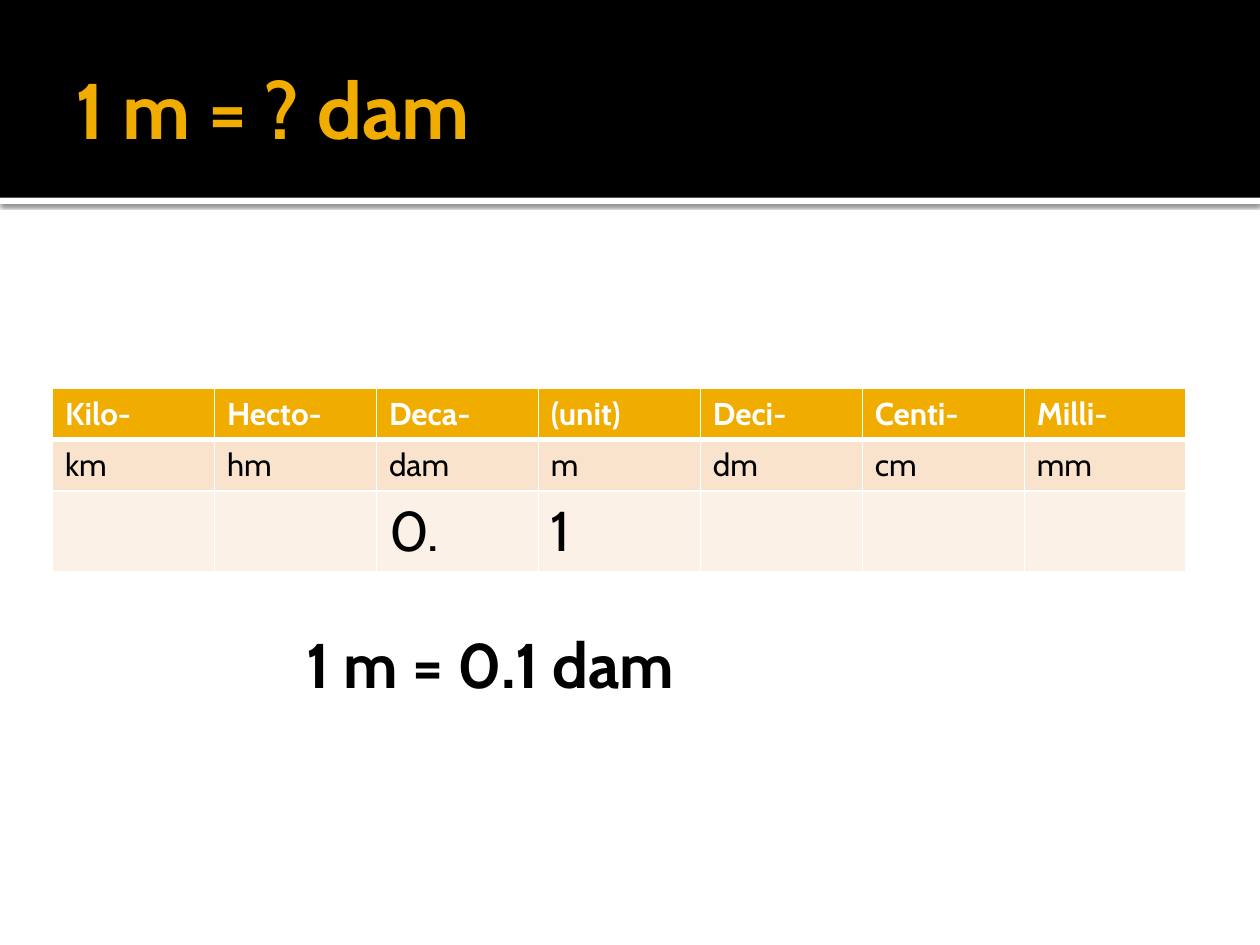
from lxml import etree
from pptx import Presentation
from pptx.dml.color import RGBColor
from pptx.enum.shapes import MSO_SHAPE
from pptx.enum.text import MSO_ANCHOR
from pptx.oxml.ns import qn
from pptx.util import Pt

RECTANGLE = MSO_SHAPE.RECTANGLE
MIDDLE, TOP = MSO_ANCHOR.MIDDLE, MSO_ANCHOR.TOP

# Content
TITLE = "1 m = ? dam"
ANSWER = "1 m = 0.1 dam"
UNITS = [
    ["Kilo-", "Hecto-", "Deca-", "(unit)", "Deci-", "Centi-", "Milli-"],
    ["km", "hm", "dam", "m", "dm", "cm", "mm"],
    ["", "", "0.", "1", "", "", ""],
]

# Style
FONT = "Cabin"
COLORS = {"white": "FFFFFF", "black": "000000", "gold": "F0AD00",
          "peach": "F9E3CC", "cream": "FCF1E7"}
# Per row: height, fill, text color, text size, bold, bottom border width
ROW_STYLES = [
    (29.3, "gold", "white", 18, True, 3),
    (29.3, "peach", "black", 18, False, 1),
    (46, "cream", "black", 32, False, 1),
]
SLIDE_WIDTH, SLIDE_HEIGHT = 720, 540
BANNER_HEIGHT, STRIP_HEIGHT = 113, 3.6
TABLE_LEFT, TABLE_TOP, TABLE_WIDTH = 30, 222, 648


def color(name):
    return RGBColor.from_string(COLORS[name])


def format_text(text_frame, text, size, color_name, bold):
    text_frame.text = text
    font = text_frame.paragraphs[0].font
    for run in text_frame.paragraphs[0].runs:
        font = run.font
    font.name, font.size, font.bold = FONT, Pt(size), bold
    font.color.rgb = color(color_name)


def add_band(slide, top, height, color_name):
    shape = slide.shapes.add_shape(RECTANGLE, 0, Pt(top), Pt(SLIDE_WIDTH), Pt(height))
    shape.shadow.inherit = False
    shape.fill.solid()
    shape.fill.fore_color.rgb = color(color_name)
    shape.line.fill.background()
    return shape


def add_shadow(shape):
    effects = shape._element.spPr.find(qn("a:effectLst"))
    shadow = etree.SubElement(effects, qn("a:outerShdw"), blurRad=str(Pt(2.5)),
                              dist=str(Pt(0.8)), dir="5400000", algn="t", rotWithShape="0")
    shade = etree.SubElement(shadow, qn("a:srgbClr"), val=COLORS["black"])
    etree.SubElement(shade, qn("a:alpha"), val="60000")


def add_text(slide, box, text, size, color_name, anchor, right_inset):
    text_box = slide.shapes.add_textbox(*(Pt(length) for length in box))
    text_frame = text_box.text_frame
    text_frame.word_wrap = True
    text_frame.vertical_anchor = anchor
    text_frame.margin_right = Pt(right_inset)
    format_text(text_frame, text, size, color_name, True)


def set_borders(cell, bottom_width, top_width):
    properties = cell._tc.get_or_add_tcPr()
    widths = {"lnL": 1, "lnR": 1, "lnT": top_width, "lnB": bottom_width}
    for position, (side, width) in enumerate(widths.items()):
        line = etree.Element(qn(f"a:{side}"), w=str(Pt(width)))
        fill = etree.SubElement(line, qn("a:solidFill"))
        etree.SubElement(fill, qn("a:srgbClr"), val=COLORS["white"])
        properties.insert(position, line)


def add_unit_table(slide):
    height = sum(style[0] for style in ROW_STYLES)
    table = slide.shapes.add_table(len(UNITS), len(UNITS[0]), Pt(TABLE_LEFT), Pt(TABLE_TOP),
                                   Pt(TABLE_WIDTH), Pt(height)).table
    for column in table.columns:
        column.width = Pt(TABLE_WIDTH / len(UNITS[0]))
    top_width = 1
    for row_index, (words, style) in enumerate(zip(UNITS, ROW_STYLES)):
        row_height, fill_name, text_color, size, bold, bottom_width = style
        table.rows[row_index].height = Pt(row_height)
        for column_index, word in enumerate(words):
            cell = table.cell(row_index, column_index)
            cell.fill.solid()
            cell.fill.fore_color.rgb = color(fill_name)
            format_text(cell.text_frame, word, size if word else 18, text_color, bold)
            set_borders(cell, bottom_width, top_width)
        top_width = bottom_width


def main():
    presentation = Presentation()
    presentation.slide_width, presentation.slide_height = Pt(SLIDE_WIDTH), Pt(SLIDE_HEIGHT)
    slide = presentation.slides.add_slide(presentation.slide_layouts[6])

    # Banner with a shadowed strip below it
    add_shadow(add_band(slide, BANNER_HEIGHT, STRIP_HEIGHT, "white"))
    add_band(slide, 0, BANNER_HEIGHT, "black")
    add_text(slide, (36, 12.2, 648, 98.6), TITLE, 45, "gold", MIDDLE, 3.6)

    # Place-value table and the answer
    add_unit_table(slide)
    add_text(slide, (168, 354, 384, 51), ANSWER, 36, "black", TOP, 7.2)

    presentation.save("out.pptx")


if __name__ == "__main__":
    main()
